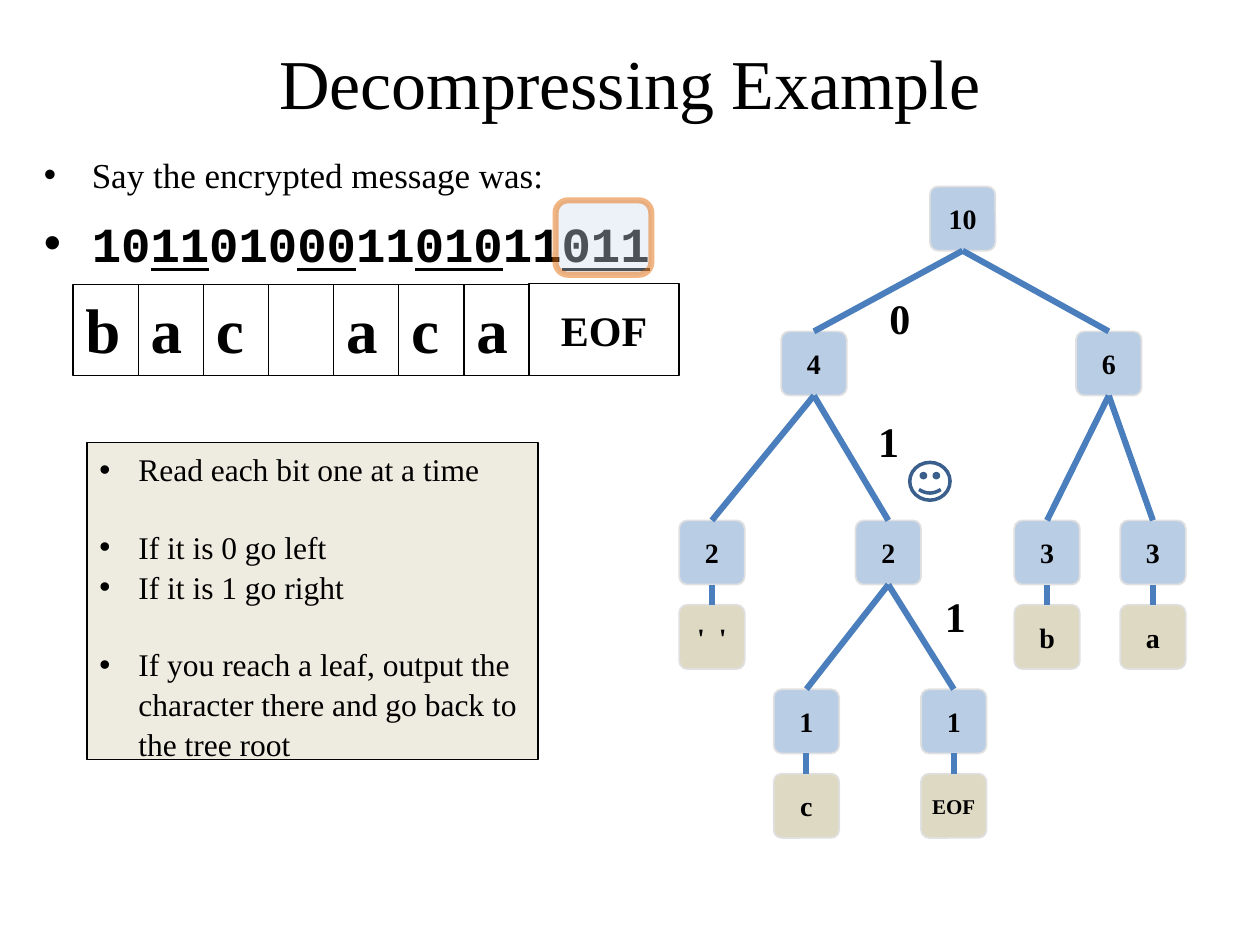
from lxml.etree import SubElement
from pptx import Presentation
from pptx.dml.color import RGBColor
from pptx.enum.shapes import MSO_CONNECTOR, MSO_SHAPE
from pptx.enum.text import MSO_ANCHOR, MSO_AUTO_SIZE, PP_ALIGN
from pptx.oxml.ns import qn
from pptx.util import Inches, Pt

BLACK = RGBColor(0x00, 0x00, 0x00)
WHITE = RGBColor(0xFF, 0xFF, 0xFF)
GRAY = RGBColor(0x4D, 0x4D, 0x4D)
NODE = RGBColor(0xB9, 0xCD, 0xE5)
LEAF = RGBColor(0xDD, 0xD9, 0xC3)
NODE_EDGE = RGBColor(0xE0, 0xE0, 0xE0)
BRANCH = RGBColor(0x4B, 0x7E, 0xBC)
PANEL = RGBColor(0xEE, 0xEC, 0xE1)
HIGHLIGHT = RGBColor(0x4F, 0x81, 0xBD)
ORANGE = RGBColor(0xE4, 0x6C, 0x0A)
FACE = RGBColor(0x3A, 0x5F, 0x8C)

SERIF, MONO = "Times New Roman", "Courier New"
NODE_W, NODE_H, LEAF_STEP = 0.52, 0.51, 0.67
ROWS = [1.48, 2.63, 4.13, 5.47]
CELL_LEFT, CELL_TOP, CELL_W, CELL_H = 0.58, 2.26, 0.517, 0.72

TREE = ("10", 7.64, [
    ("4", 6.46, [
        ("2", 5.65, "'  '"),
        ("2", 7.05, [("1", 6.4, "c"), ("1", 7.57, "EOF")])]),
    ("6", 8.8, [("3", 8.31, "b"), ("3", 9.15, "a")])])
BITS = ["10", "11", "010", "00", "11", "010", "11", "011"]
STEPS = [("Read each bit one at a time", 0),
         ("If it is 0 go left", 21.7),
         ("If it is 1 go right", 0),
         ("If you reach a leaf, output the character there and go back to the tree root", 21.7)]
BRANCH_BITS = [("0", 6.96, 2.27), ("1", 6.87, 3.25), ("1", 7.4, 4.64)]


def format_runs(p, size, bold=False, font=SERIF):
    """Give every run of a paragraph one font, size and weight."""
    for r in p.runs:
        r.font.name, r.font.size, r.font.bold = font, Pt(size), bold
        r.font.color.rgb = BLACK


def add_bullet(p, indent):
    """Turn a paragraph into a bullet with a hanging indent."""
    p.alignment = PP_ALIGN.LEFT
    pPr = p._p.get_or_add_pPr()
    pPr.set("marL", str(Inches(indent)))
    pPr.set("indent", str(-Inches(indent)))
    SubElement(pPr, qn("a:buFont")).set("typeface", "Arial")
    SubElement(pPr, qn("a:buChar")).set("char", "•")


def set_alpha(color_format, percent):
    """Make a solid colour partly transparent."""
    color = color_format._xFill.find(qn("a:srgbClr"))
    SubElement(color, qn("a:alpha")).set("val", str(percent * 1000))


def add_box(s, kind, box, fill, edge, width):
    """Add a flat preset shape."""
    sp = s.shapes.add_shape(kind, *map(Inches, box))
    sp.shadow.inherit = False
    if fill is None:
        sp.fill.background()
    else:
        sp.fill.solid()
        sp.fill.fore_color.rgb = fill
    sp.line.color.rgb = edge
    sp.line.width = Pt(width)
    return sp


def add_label(sp, text, size, centered, space=0):
    """Write one bold line into a shape."""
    tf = sp.text_frame
    tf.text = text
    tf.word_wrap = not centered
    tf.vertical_anchor = MSO_ANCHOR.MIDDLE if centered else MSO_ANCHOR.TOP
    p = tf.paragraphs[0]
    p.alignment = PP_ALIGN.CENTER if centered else PP_ALIGN.LEFT
    p.space_before = Pt(space)
    format_runs(p, size, bold=True)


def add_node(s, text, cx, top, fill, size=16):
    """Add one rounded tree node centred on cx."""
    box = (cx - NODE_W / 2, top, NODE_W, NODE_H)
    sp = add_box(s, MSO_SHAPE.ROUNDED_RECTANGLE, box, fill, NODE_EDGE, 1)
    sp.adjustments[0] = 0.126
    add_label(sp, text, size, centered=True)
    return sp


def add_branch(s, parent, child):
    """Join the bottom of a parent to the top of its child."""
    line = s.shapes.add_connector(MSO_CONNECTOR.STRAIGHT, 0, 0, 0, 0)
    line.begin_connect(parent, 2)
    line.end_connect(child, 0)
    line.line.color.rgb = BRANCH
    line.line.width = Pt(3.5)
    SubElement(line._element.spPr, qn("a:effectLst"))


def add_tree(s, tree, row=0):
    """Draw a node with everything below it and return the node."""
    count, cx, below = tree
    node = add_node(s, count, cx, ROWS[row], NODE)
    if isinstance(below, str):
        size = 12 if below == "EOF" else 16
        children = [add_node(s, below, cx, ROWS[row] + LEAF_STEP, LEAF, size)]
    else:
        children = [add_tree(s, child, row + 1) for child in below]
    for child in children:
        add_branch(s, node, child)
    return node


def add_title(s, text):
    """Place and format the title."""
    sp = s.shapes.title
    sp.left, sp.top, sp.width, sp.height = map(Inches, (0.5, 0.3, 9, 0.7))
    tf = sp.text_frame
    tf.text = text
    tf.auto_size = MSO_AUTO_SIZE.NONE
    tf.vertical_anchor = MSO_ANCHOR.MIDDLE
    tf.paragraphs[0].alignment = PP_ALIGN.CENTER
    format_runs(tf.paragraphs[0], 40)


def add_message(s):
    """Show the bits, every second code underlined and the last highlighted."""
    tf = s.shapes.add_textbox(*map(Inches, (0.25, 1.17, 5.58, 1.58))).text_frame
    tf.word_wrap = True
    tf.text = "Say the encrypted message was:"
    intro, bits = tf.paragraphs[0], tf.add_paragraph()
    intro.space_before, bits.space_before = Pt(2), Pt(10)
    for code in BITS:
        bits.add_run().text = code
    format_runs(intro, 20)
    format_runs(bits, 28, bold=True, font=MONO)
    for r in bits.runs[1::2]:
        r.font.underline = True
    bits.runs[-1].font.color.rgb = GRAY
    for p in tf.paragraphs:
        add_bullet(p, 0.38)
    sp = add_box(s, MSO_SHAPE.ROUNDED_RECTANGLE, (4.41, 1.59, 0.76, 0.59), HIGHLIGHT, ORANGE, 3.5)
    set_alpha(sp.fill.fore_color, 10)
    set_alpha(sp.line.color, 50)


def add_steps(s):
    """Add the panel of decoding rules."""
    sp = add_box(s, MSO_SHAPE.RECTANGLE, (0.69, 3.51, 3.58, 2.52), PANEL, BLACK, 0.75)
    tf = sp.text_frame
    tf.word_wrap = True
    tf.vertical_anchor = MSO_ANCHOR.TOP
    tf.text = "\n".join(text for text, _ in STEPS)
    for p, (_, gap) in zip(tf.paragraphs, STEPS):
        p.line_spacing = 1.05
        p.space_before = Pt(gap)
        format_runs(p, 18)
        add_bullet(p, 0.31)


def add_output(s, letters):
    """Add the row of decoded characters, closed by EOF."""
    for i, letter in enumerate(letters):
        box = (CELL_LEFT + i * CELL_W, CELL_TOP, CELL_W, CELL_H)
        sp = add_box(s, MSO_SHAPE.RECTANGLE, box, WHITE, BLACK, 0.75)
        if letter.strip():
            add_label(sp, letter, 36, centered=False, space=4)
    box = (CELL_LEFT + len(letters) * CELL_W, 2.25, 1.19, 0.73)
    sp = add_box(s, MSO_SHAPE.RECTANGLE, box, WHITE, BLACK, 0.75)
    add_label(sp, "EOF", 24, centered=True, space=2)


def main():
    """Build the slide."""
    prs = Presentation()
    prs.slide_width, prs.slide_height = Inches(10), Inches(7.5)
    s = prs.slides.add_slide(prs.slide_layouts[5])
    add_title(s, "Decompressing Example")
    add_message(s)
    add_box(s, MSO_SHAPE.SMILEY_FACE, (7.22, 3.67, 0.32, 0.3), None, FACE, 2)
    add_tree(s, TREE)
    add_steps(s)
    add_output(s, "bac aca")
    for bit, left, top in BRANCH_BITS:
        sp = s.shapes.add_textbox(*map(Inches, (left, top, 0.35, 0.51)))
        add_label(sp, bit, 24, centered=False, space=2)
    prs.save("out.pptx")


if __name__ == "__main__":
    main()
